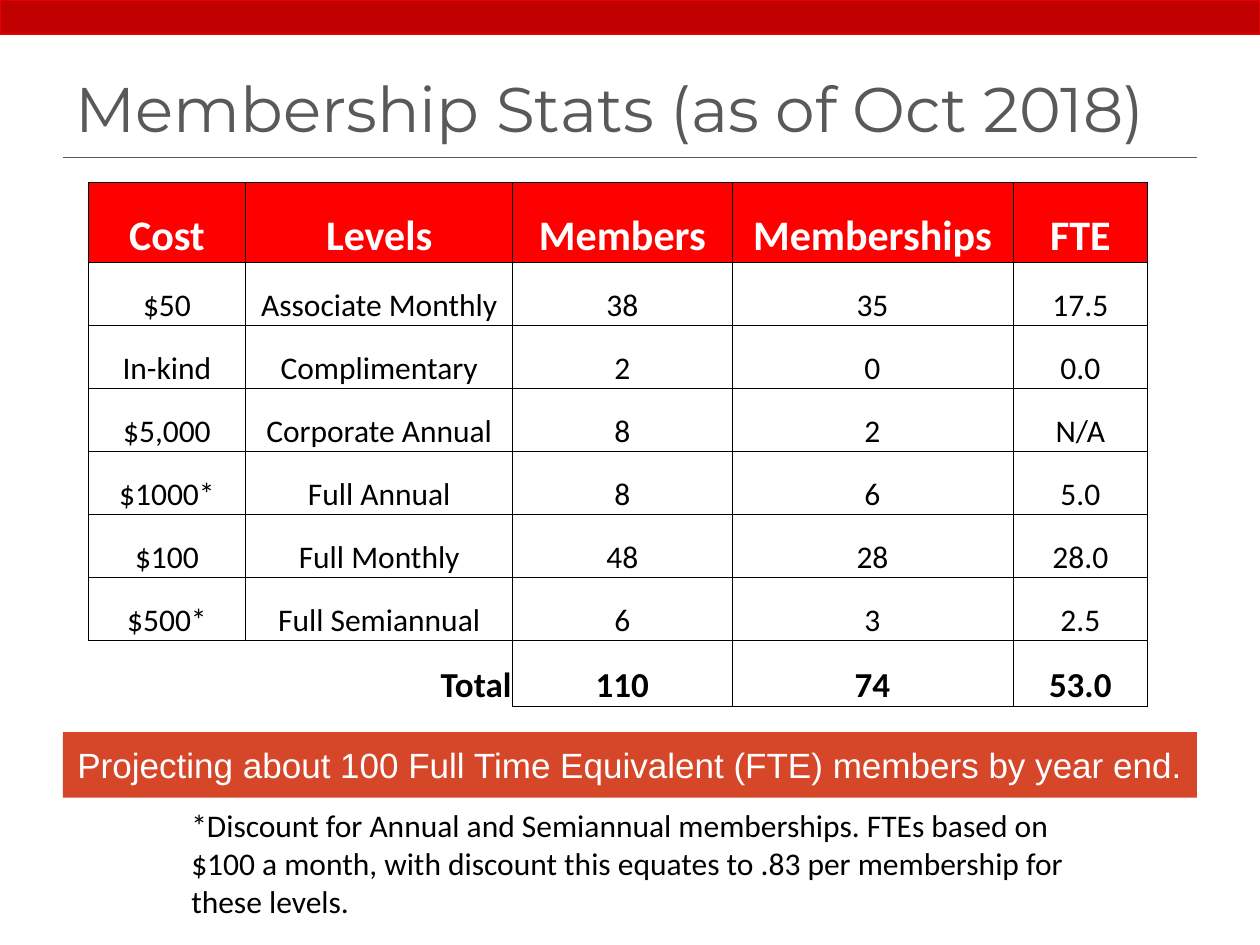
from lxml import etree
from pptx import Presentation
from pptx import util as u
from pptx.dml.color import RGBColor
from pptx.enum import shapes, text
from pptx.oxml.ns import qn

COLORS = {
    "bar": "C00000", "bar_line": "E20000", "title": "595959",
    "header": "FF0000", "banner": "D6472A", "white": "FFFFFF", "black": "000000",
}
WIDTH, HEIGHT, MARGIN = 10, 7.5, 0.5
CONTENT_WIDTH = WIDTH - 2 * MARGIN

COLUMN_WIDTHS = [1.25, 2.12, 1.74, 2.23, 1.07]
ROW_HEIGHTS = [0.63] + [0.5] * 6 + [0.53]
MEMBERSHIP_ROWS = [
    ["Cost", "Levels", "Members", "Memberships", "FTE"],
    ["$50", "Associate Monthly", "38", "35", "17.5"],
    ["In-kind", "Complimentary", "2", "0", "0.0"],
    ["$5,000", "Corporate Annual", "8", "2", "N/A"],
    ["$1000*", "Full Annual", "8", "6", "5.0"],
    ["$100", "Full Monthly", "48", "28", "28.0"],
    ["$500*", "Full Semiannual", "6", "3", "2.5"],
    ["", "Total", "110", "74", "53.0"],
]


def color(name):
    return RGBColor.from_string(COLORS[name])


def inches(*values):
    return [u.Inches(value) for value in values]


def write(text_frame, words, font_name, size, color_name, bold=False,
          align=text.PP_ALIGN.LEFT):
    text_frame.text = words
    paragraph = text_frame.paragraphs[0]
    paragraph.alignment = align
    for run in paragraph.runs:
        run.font.name = font_name
        run.font.size = u.Pt(size)
        run.font.bold = bold
        run.font.color.rgb = color(color_name)


def add_box(slide, box, fill, line=None):
    shape = slide.shapes.add_shape(shapes.MSO_SHAPE.RECTANGLE, *inches(*box))
    shape.shadow.inherit = False
    shape.fill.solid()
    shape.fill.fore_color.rgb = color(fill)
    if line:
        shape.line.color.rgb = color(line)
        shape.line.width = u.Pt(0.75)
    else:
        shape.line.fill.background()
    return shape


def add_rule(slide, top):
    rule = slide.shapes.add_connector(
        shapes.MSO_CONNECTOR.STRAIGHT, *inches(MARGIN, top, WIDTH - MARGIN, top))
    rule.line.color.rgb = color("title")
    rule.line.width = u.Pt(0.75)
    etree.SubElement(rule._element.spPr, qn("a:effectLst"))


def set_title(slide, words):
    title = slide.shapes.title
    title.left, title.top, title.width, title.height = inches(
        MARGIN, 0.34, CONTENT_WIDTH, 0.91)
    frame = title.text_frame
    frame.margin_left = frame.margin_right = u.Inches(0.1)
    frame.margin_top = frame.margin_bottom = u.Inches(0.1)
    frame.vertical_anchor = text.MSO_ANCHOR.BOTTOM
    write(frame, words, "Montserrat", 36, "title")


def set_borders(cell, sides):
    properties = cell._tc.get_or_add_tcPr()
    for side in "LRTB":
        line = etree.SubElement(properties, qn(f"a:ln{side}"), w=str(u.Pt(0.5)))
        if side in sides:
            fill = etree.SubElement(line, qn("a:solidFill"))
            etree.SubElement(fill, qn("a:srgbClr"), val=COLORS["black"])
        else:
            etree.SubElement(line, qn("a:noFill"))


def format_cell(cell, words, row, column):
    is_header, is_total = row == 0, row == len(MEMBERSHIP_ROWS) - 1
    # The first two cells of the total row stand outside the grid
    set_borders(cell, {0: "T", 1: "TR"}.get(column, "LRTB") if is_total else "LRTB")
    if is_header:
        cell.fill.solid()
        cell.fill.fore_color.rgb = color("header")
    else:
        cell.fill.background()
    cell.margin_left = cell.margin_right = cell.margin_top = u.Inches(0.01)
    cell.margin_bottom = 0
    cell.vertical_anchor = text.MSO_ANCHOR.BOTTOM
    align = text.PP_ALIGN.RIGHT if words == "Total" else text.PP_ALIGN.CENTER
    size = 24 if is_header else 20 if is_total else 18
    write(cell.text_frame, words, "Calibri", size,
          "white" if is_header else "black", is_header or is_total, align)


def add_membership_table(slide, left, top):
    table = slide.shapes.add_table(
        len(ROW_HEIGHTS), len(COLUMN_WIDTHS),
        *inches(left, top, sum(COLUMN_WIDTHS), sum(ROW_HEIGHTS))).table
    table.first_row = table.horz_banding = False
    for column, width in zip(table.columns, COLUMN_WIDTHS):
        column.width = u.Inches(width)
    for row, height in zip(table.rows, ROW_HEIGHTS):
        row.height = u.Inches(height)
    for row, values in enumerate(MEMBERSHIP_ROWS):
        for column, words in enumerate(values):
            format_cell(table.cell(row, column), words, row, column)


def add_banner(slide, words):
    banner = add_box(slide, (MARGIN, 5.81, CONTENT_WIDTH, 0.52), "banner")
    banner.text_frame.vertical_anchor = text.MSO_ANCHOR.MIDDLE
    write(banner.text_frame, words, "Arial", 20, "white", align=text.PP_ALIGN.CENTER)


def add_footnote(slide, words):
    footnote = slide.shapes.add_textbox(*inches(1.42, 6.35, 7.47, 1.01))
    footnote.text_frame.word_wrap = True
    footnote.text_frame.auto_size = text.MSO_AUTO_SIZE.SHAPE_TO_FIT_TEXT
    write(footnote.text_frame, words, "Calibri", 18, "black")


def main():
    presentation = Presentation()
    presentation.slide_width, presentation.slide_height = inches(WIDTH, HEIGHT)
    slide = presentation.slides.add_slide(presentation.slide_layouts[5])

    # Top bar, title and rule
    add_box(slide, (0, 0, WIDTH, 0.27), "bar", "bar_line")
    add_rule(slide, 1.25)
    set_title(slide, "Membership Stats (as of Oct 2018)")

    # Projection, footnote and table
    add_banner(slide, "Projecting about 100 Full Time Equivalent (FTE) "
                      "members by year end.")
    add_footnote(slide, "*Discount for Annual and Semiannual memberships. FTEs based "
                        "on $100 a month, with discount this equates to .83 per "
                        "membership for these levels.")
    add_membership_table(slide, 0.7, 1.45)

    presentation.save("out.pptx")


if __name__ == "__main__":
    main()
